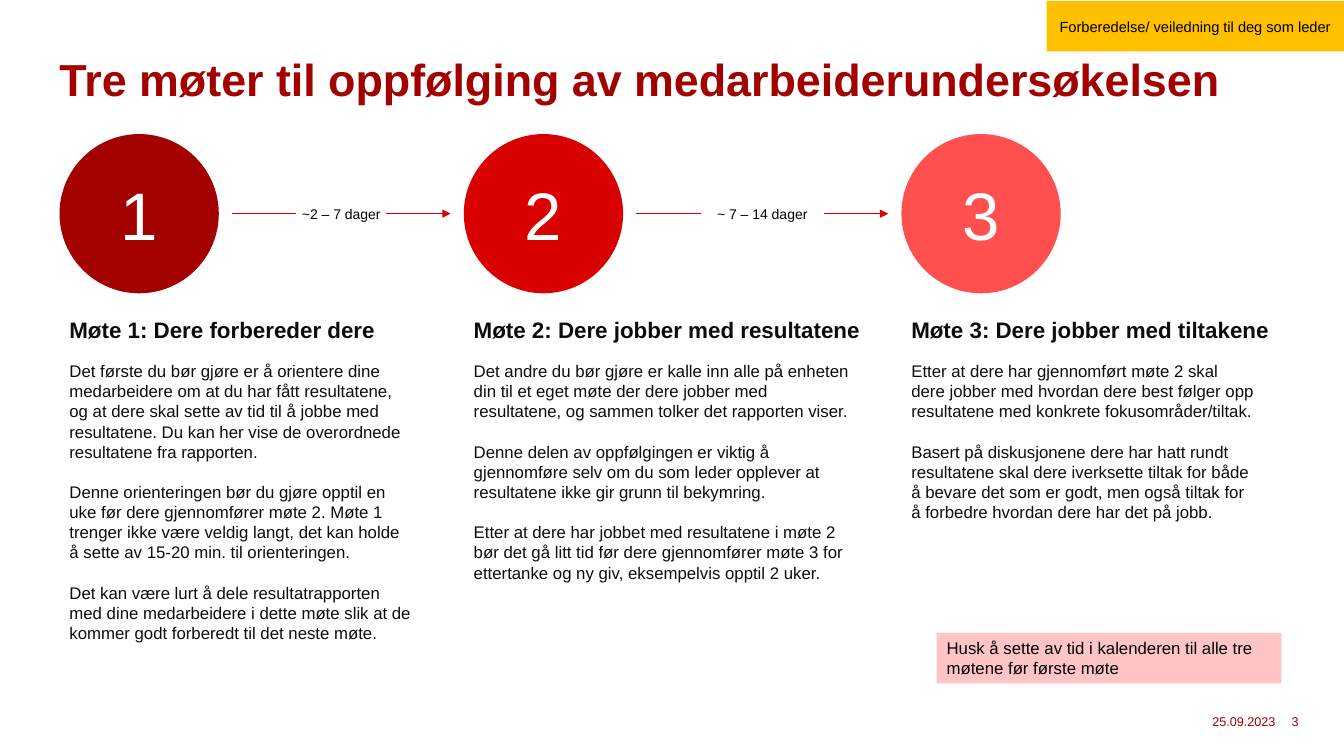
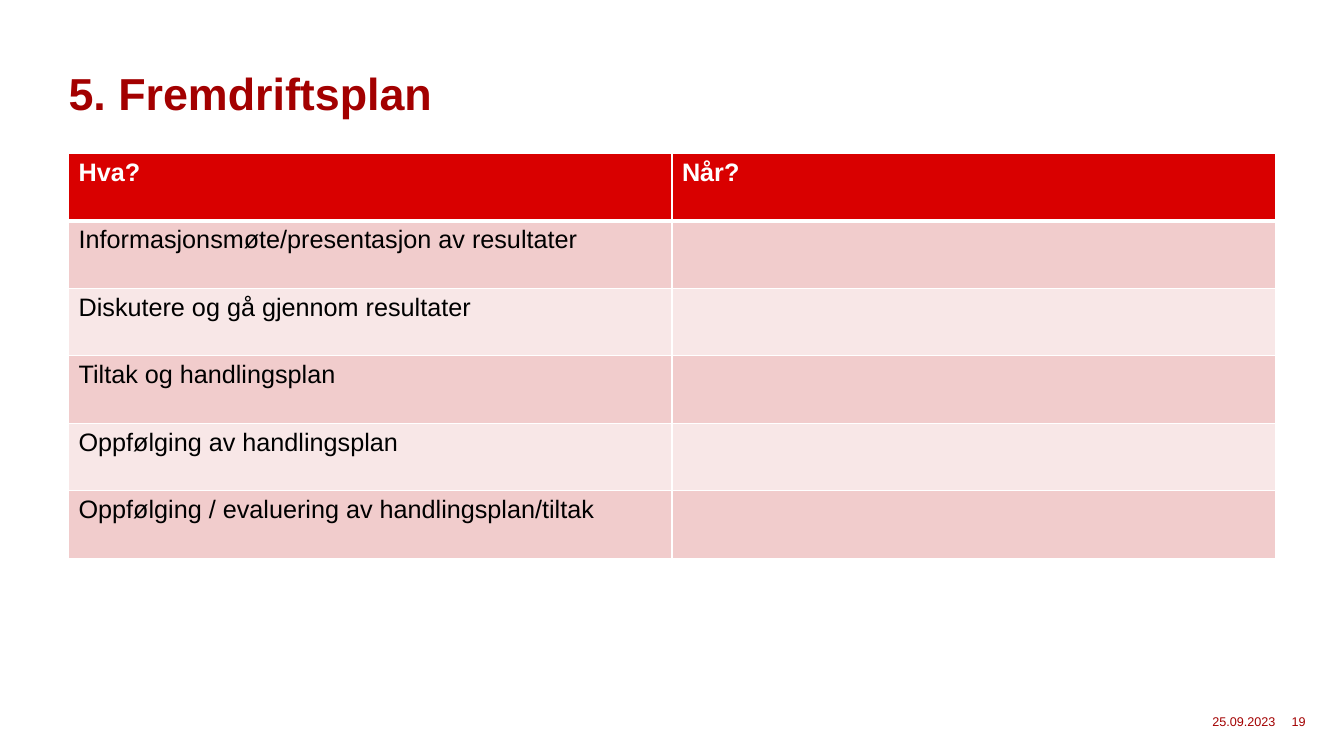
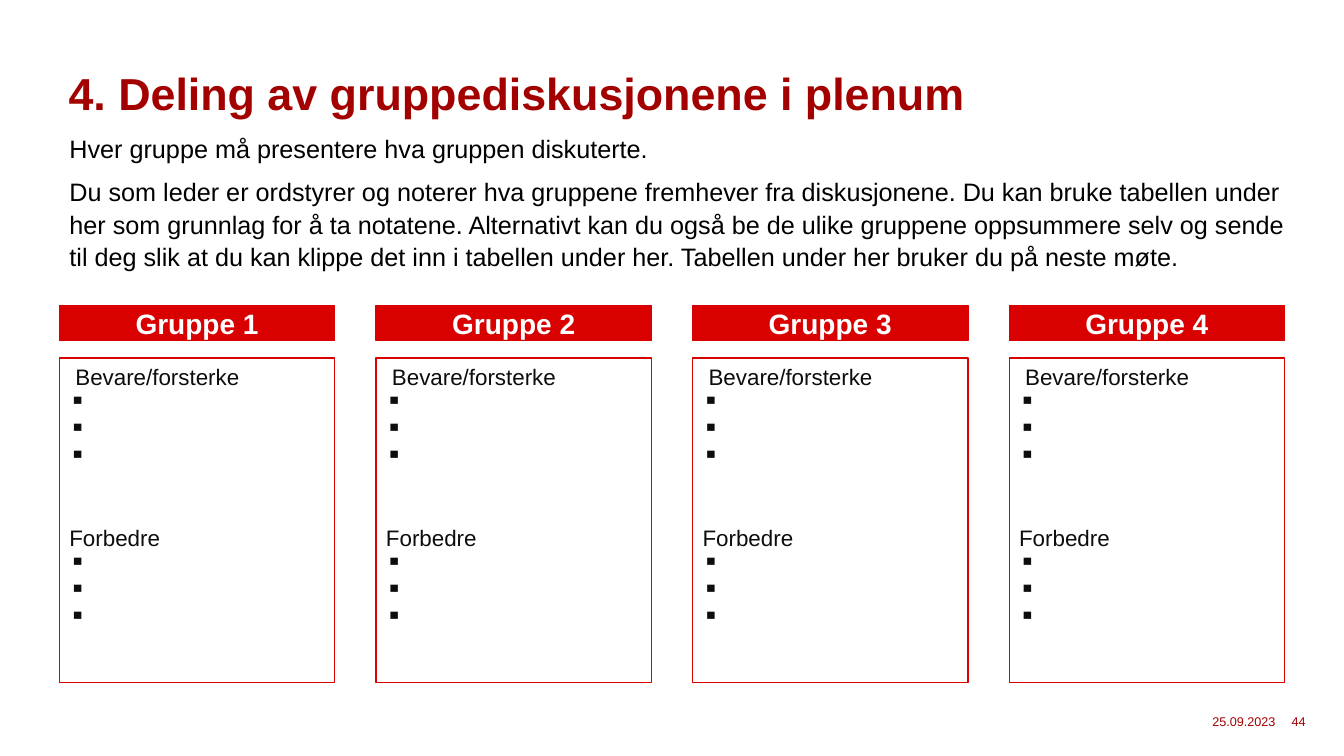
import pptx
import pptx.dml.color
import pptx.enum.shapes
import pptx.enum.text
import pptx.oxml
import pptx.oxml.ns
import pptx.util
from pptx.util import Inches

FONT = "Arial"
DARK_RED, RED, LIGHT_RED, PINK = "A30000", "D90000", "FF4F4F", "FFC4C4"
YELLOW, WHITE, BLACK, INK = "FFC000", "FFFFFF", "000000", "0D0D0D"
ROW_COLOURS = ("F1CCCC", "F8E7E7")
LEFT, CENTER, RIGHT = (pptx.enum.text.PP_ALIGN.LEFT, pptx.enum.text.PP_ALIGN.CENTER,
                       pptx.enum.text.PP_ALIGN.RIGHT)
TOP, MIDDLE = pptx.enum.text.MSO_ANCHOR.TOP, pptx.enum.text.MSO_ANCHOR.MIDDLE
SHAPES = pptx.enum.shapes.MSO_SHAPE
MARGIN = 0.59
DATE = "25.09.2023"

CIRCLE_TOP, CIRCLE_SIZE = 1.33, 1.58
ARROW_GAP, ARROW_LENGTH = 0.13, 0.64
MEETINGS = [
    (0.59, 3.61, DARK_RED, "Møte 1: Dere forbereder dere", [
        "Det første du bør gjøre er å orientere dine medarbeidere om at du har fått resultatene, "
        "og at dere skal sette av tid til å jobbe med resultatene. Du kan her vise de overordnede "
        "resultatene fra rapporten.",
        "Denne orienteringen bør du gjøre opptil en uke før dere gjennomfører møte 2. Møte 1 "
        "trenger ikke være veldig langt, det kan holde å sette av 15-20 min. til orienteringen.",
        "Det kan være lurt å dele resultatrapporten med dine medarbeidere i dette møte slik at "
        "de kommer godt forberedt til det neste møte."]),
    (4.6, 4.01, RED, "Møte 2: Dere jobber med resultatene", [
        "Det andre du bør gjøre er kalle inn alle på enheten din til et eget møte der dere "
        "jobber med resultatene, og sammen tolker det rapporten viser.",
        "Denne delen av oppfølgingen er viktig å gjennomføre selv om du som leder opplever at "
        "resultatene ikke gir grunn til bekymring.",
        "Etter at dere har jobbet med resultatene i møte 2 bør det gå litt tid før dere "
        "gjennomfører møte 3 for ettertanke og ny giv, eksempelvis opptil 2 uker."]),
    (8.94, 3.61, LIGHT_RED, "Møte 3: Dere jobber med tiltakene", [
        "Etter at dere har gjennomført møte 2 skal dere jobber med hvordan dere best følger opp "
        "resultatene med konkrete fokusområder/tiltak.",
        "Basert på diskusjonene dere har hatt rundt resultatene skal dere iverksette tiltak for "
        "både å bevare det som er godt, men også tiltak for å forbedre hvordan dere har det på "
        "jobb."]),
]
INTERVALS = ["~2 – 7 dager", "~ 7 – 14 dager"]
PLAN = ["Informasjonsmøte/presentasjon av resultater", "Diskutere og gå gjennom resultater",
        "Tiltak og handlingsplan", "Oppfølging av handlingsplan",
        "Oppfølging / evaluering av handlingsplan/tiltak"]
SHARING = [
    "Hver gruppe må presentere hva gruppen diskuterte.",
    "Du som leder er ordstyrer og noterer hva gruppene fremhever fra diskusjonene. Du kan bruke "
    "tabellen under her som grunnlag for å ta notatene. Alternativt kan du også be de ulike "
    "gruppene oppsummere selv og sende til deg slik at du kan klippe det inn i tabellen under "
    "her. Tabellen under her bruker du på neste møte."]


def colour(value):
    return pptx.dml.color.RGBColor.from_string(value)


def add_xml(parent, markup):
    """Append an element written with the a: prefix."""
    tag, rest = markup.split(" ", 1)
    parent.append(pptx.oxml.parse_xml(f"{tag} {pptx.oxml.ns.nsdecls('a')} {rest}"))


def add_text(box, text, size=12, color=INK, bold=False, align=LEFT, before=0, after=0,
             line_spacing=None, indent=0, bullet=False):
    """Add one paragraph; the first one fills the paragraph the frame already has."""
    frame = box.text_frame
    para = frame.paragraphs[0] if not frame.text else frame.add_paragraph()
    if indent:
        properties = para._p.get_or_add_pPr()
        properties.set("marL", str(Inches(indent)))
        if bullet:
            properties.set("indent", str(-Inches(indent)))
            add_xml(properties, '<a:buChar char="▪"/>')
    para.alignment = align
    para.space_before = pptx.util.Pt(before)
    para.space_after = pptx.util.Pt(after)
    if line_spacing:
        para.line_spacing = line_spacing
    span = para.add_run()
    span.text = text
    font = span.font
    font.name, font.size, font.bold = FONT, pptx.util.Pt(size), bold
    font.color.rgb = colour(color)


def set_frame(box, anchor, inset=None):
    frame = box.text_frame
    frame.word_wrap = True
    frame.vertical_anchor = anchor
    if inset is not None:
        frame.margin_left = frame.margin_right = Inches(inset)
        frame.margin_top = frame.margin_bottom = Inches(inset)


def add_box(page, left, top, width, height, anchor=TOP, inset=None):
    box = page.shapes.add_textbox(Inches(left), Inches(top), Inches(width), Inches(height))
    set_frame(box, anchor, inset)
    return box


def add_filled(page, left, top, width, height, fill, kind=SHAPES.RECTANGLE, line=None,
               anchor=MIDDLE):
    shape = page.shapes.add_shape(kind, Inches(left), Inches(top), Inches(width), Inches(height))
    shape.shadow.inherit = False
    shape.fill.solid()
    shape.fill.fore_color.rgb = colour(fill)
    if line:
        shape.line.color.rgb = colour(line)
        shape.line.width = pptx.util.Pt(1)
    else:
        shape.line.fill.background()
    set_frame(shape, anchor)
    return shape


def add_line(page, start, end, y, arrow=False):
    line = page.shapes.add_connector(pptx.enum.shapes.MSO_CONNECTOR.STRAIGHT,
                                     Inches(start), Inches(y), Inches(end), Inches(y))
    line.line.color.rgb = colour(RED)
    line.line.width = pptx.util.Pt(0.5)
    if arrow:
        add_xml(line.line._get_or_add_ln(), '<a:tailEnd type="triangle"/>')
    add_xml(line._element.spPr, "<a:effectLst />")


def add_page(deck, title, number, left=0.68, top=0.48):
    """Add a blank page with the shared title, date and page number."""
    page = deck.slides.add_slide(deck.slide_layouts[6])
    box = add_box(page, left, top, 11.97, 0.94, MIDDLE, inset=0)
    add_text(box, title, size=32, color=DARK_RED, bold=True, line_spacing=0.9)
    for text, x, width, align in ((DATE, 11.47, 1.18, RIGHT), (str(number), 12.81, 0.38, LEFT)):
        box = add_box(page, x, 7.04, width, 0.23, MIDDLE, inset=0)
        add_text(box, text, size=9, color=DARK_RED, align=align)
    return page


def add_meeting(page, number, left, width, fill, heading, texts):
    circle = add_filled(page, left, CIRCLE_TOP, CIRCLE_SIZE, CIRCLE_SIZE, fill, SHAPES.OVAL)
    add_text(circle, str(number), size=48, color=WHITE, align=CENTER)
    add_text(add_box(page, left, 3.09, 4.2, 0.37), heading, size=16, bold=True)
    body = add_box(page, left, 3.53, width, 2.93)
    for index, text in enumerate(texts):
        add_text(body, text, before=14.4 if index else 0)


def add_interval(page, text, left_circle, right_circle):
    """Put a label between two circles, with a line on each side of it."""
    y = CIRCLE_TOP + CIRCLE_SIZE / 2
    start = left_circle + CIRCLE_SIZE + ARROW_GAP
    end = right_circle - ARROW_GAP
    add_line(page, start, start + ARROW_LENGTH, y)
    add_line(page, end - ARROW_LENGTH, end, y, arrow=True)
    width, height = 1.1, 0.27
    label = add_box(page, (start + end - width) / 2, y - height / 2, width, height, MIDDLE)
    add_text(label, text, size=10, color=BLACK, align=CENTER)


def style_cell(cell, fill, top=1, bottom=1):
    properties = cell._tc.get_or_add_tcPr()
    for side, width in (("L", 1), ("R", 1), ("T", top), ("B", bottom)):
        add_xml(properties, f'<a:ln{side} w="{pptx.util.Pt(width)}"><a:solidFill>'
                            f'<a:srgbClr val="{WHITE}"/></a:solidFill></a:ln{side}>')
    cell.fill.solid()
    cell.fill.fore_color.rgb = colour(fill)


def add_plan_table(page, header, rows):
    row_height = 0.67
    table = page.shapes.add_table(len(rows) + 1, len(header), Inches(0.68), Inches(1.52),
                                  Inches(11.97), Inches(row_height * (len(rows) + 1))).table
    for index, texts in enumerate([header] + rows):
        is_header = index == 0
        fill = RED if is_header else ROW_COLOURS[(index - 1) % 2]
        for cell, text in zip(table.rows[index].cells, texts):
            style_cell(cell, fill, top=3 if index == 1 else 1, bottom=3 if is_header else 1)
            if text:
                add_text(cell, text, size=18, color=WHITE if is_header else BLACK, bold=is_header)


def add_group(page, name, left, width):
    header = add_filled(page, left, 3.03, width, 0.35, RED, line=RED)
    add_text(header, name, size=20, color=WHITE, bold=True, align=CENTER)
    notes = add_filled(page, left, 3.55, width, 3.22, WHITE, line=RED, anchor=TOP)
    for heading, indent, before in (("Bevare/forsterke", 0.06, 0), ("Forbedre", 0, 38.4)):
        add_text(notes, heading, size=16, indent=indent, before=before)
        for _ in range(3):
            add_text(notes, " ", size=16, indent=0.38, bullet=True)


def build_meetings(deck):
    page = add_page(deck, "Tre møter til oppfølging av medarbeiderundersøkelsen", 3,
                    left=MARGIN, top=0.34)
    tag = add_filled(page, 10.38, 0.01, 2.95, 0.5, YELLOW)
    add_text(tag, "Forberedelse/ veiledning til deg som leder", size=10.5, color=BLACK,
             align=CENTER)
    for number, meeting in enumerate(MEETINGS, 1):
        add_meeting(page, number, *meeting)
    for text, before, after in zip(INTERVALS, MEETINGS, MEETINGS[1:]):
        add_interval(page, text, before[0], after[0])
    reminder = add_filled(page, 9.29, 6.28, 3.42, 0.5, PINK, anchor=TOP)
    add_text(reminder, "Husk å sette av tid i kalenderen til alle tre møtene før første møte",
             color=BLACK)


def build_plan(deck):
    page = add_page(deck, "5. Fremdriftsplan", 19)
    add_plan_table(page, ["Hva?", "Når?"], [[task, ""] for task in PLAN])


def build_sharing(deck):
    page = add_page(deck, "4. Deling av gruppediskusjonene i plenum", 44)
    intro = add_box(page, MARGIN, 1.25, 12.38, 1.49)
    for text in SHARING:
        add_text(intro, text, size=18, color=BLACK, line_spacing=1.07, after=8)
    width, gap = 2.73, 0.41
    for index in range(4):
        add_group(page, f"Gruppe {index + 1}", MARGIN + index * (width + gap), width)


def main():
    deck = pptx.Presentation()
    deck.slide_width, deck.slide_height = Inches(13.33), Inches(7.5)
    build_meetings(deck)
    build_plan(deck)
    build_sharing(deck)
    deck.save("out.pptx")


if __name__ == "__main__":
    main()
